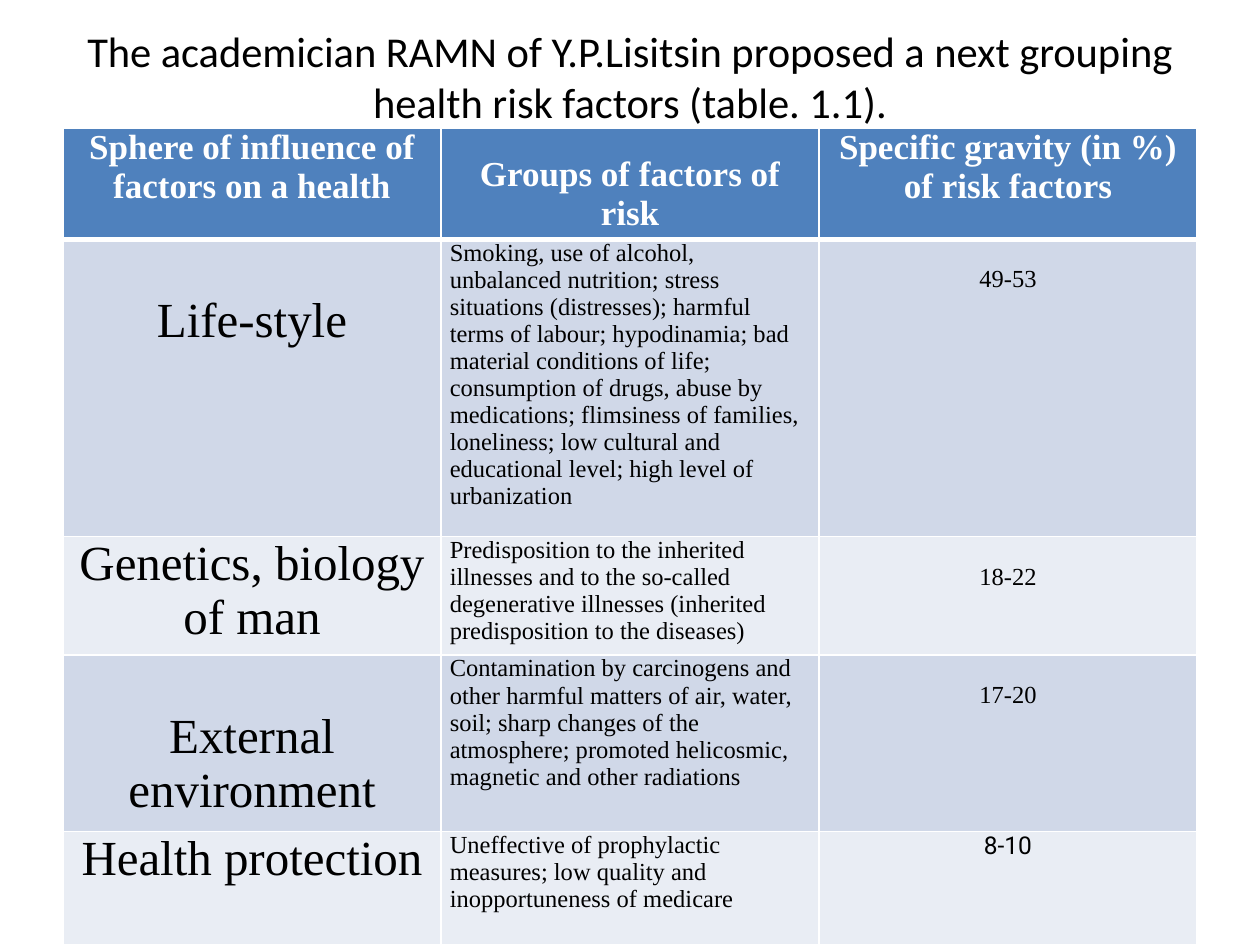
from lxml.etree import SubElement
from pptx import Presentation
from pptx.dml.color import RGBColor
from pptx.enum.text import MSO_ANCHOR as Anchor, PP_ALIGN as Align
from pptx.oxml.ns import qn
from pptx.util import Inches, Pt

TITLE = "The academician RAMN of Y.P.Lisitsin proposed a next grouping health risk factors (table. 1.1)."
HEADINGS = [
    "Sphere of influence of factors on a health",
    "Groups of factors of risk",
    "Specific gravity (in %) of risk factors",
]
FACTORS = [
    ("Life-style",
     "Smoking, use of alcohol, unbalanced nutrition; stress situations (distresses); harmful terms of labour; "
     "hypodinamia; bad material conditions of life; consumption of drugs, abuse by medications; flimsiness of "
     "families, loneliness; low cultural and educational level; high level of urbanization",
     "49-53"),
    ("Genetics, biology of man",
     "Predisposition to the inherited illnesses and to the so-called degenerative illnesses "
     "(inherited predisposition to the diseases)",
     "18-22"),
    ("External environment",
     "Contamination by carcinogens and other harmful matters of air, water, soil; sharp changes of the "
     "atmosphere; promoted helicosmic, magnetic and other radiations",
     "17-20"),
    ("Health protection",
     "Uneffective of prophylactic measures; low quality and inopportuneness of medicare",
     "8-10"),
]
ROW_HEIGHTS = [0.88, 2.36, 0.94, 1.4, 0.9]
COLUMN_WIDTH = 3
TOP_MARGINS = {(0, 1): 0.21, (1, 0): 0.43, (1, 2): 0.21, (2, 2): 0.21, (3, 0): 0.43, (3, 2): 0.21}

THEME = {
    "title": {"name": "Calibri", "size": Pt(24.3), "bold": False, "color": "000000"},
    "heading": {"name": "Times New Roman", "size": Pt(20), "bold": True, "color": "FFFFFF"},
    "sphere": {"name": "Times New Roman", "size": Pt(28), "bold": False, "color": "000000"},
    "body": {"name": "Times New Roman", "size": Pt(14), "bold": False, "color": "000000"},
    "last_value": {"name": "Roboto", "size": Pt(14), "bold": False, "color": "000000"},
    "header_fill": "4F81BD",
    "band_fills": ["E9EDF4", "D0D8E8"],
    "border": "FFFFFF",
}


def write(frame, text, style, alignment):
    paragraph = frame.paragraphs[0]
    paragraph.alignment = alignment
    run = paragraph.add_run()
    run.text = text
    for key, value in THEME[style].items():
        if key == "color":
            run.font.color.rgb = RGBColor.from_string(value)
        else:
            setattr(run.font, key, value)


def add_borders(cell, top, bottom):
    properties = cell._tc.get_or_add_tcPr()
    widths = {"a:lnL": 1, "a:lnR": 1, "a:lnT": top, "a:lnB": bottom}
    for position, (tag, width) in enumerate(widths.items()):
        line = SubElement(properties, qn(tag), w=str(Pt(width)))
        fill = SubElement(line, qn("a:solidFill"))
        SubElement(fill, qn("a:srgbClr"), val=THEME["border"])
        properties.insert(position, line)


def add_title(slide):
    frame = slide.shapes.add_textbox(Inches(0.5), Inches(0.2), Inches(9), Inches(0.82)).text_frame
    settings = {"word_wrap": True, "margin_top": 0, "margin_bottom": 0, "vertical_anchor": Anchor.TOP}
    for key, value in settings.items():
        setattr(frame, key, value)
    write(frame, TITLE, "title", Align.CENTER)


def cell_style(row, column):
    if row == 0:
        return "heading"
    if column == 0:
        return "sphere"
    return "last_value" if (row, column) == (len(FACTORS), 2) else "body"


def add_factor_table(slide):
    rows = [HEADINGS, *FACTORS]
    columns = len(HEADINGS)
    table = slide.shapes.add_table(
        len(rows), columns, Inches(0.5), Inches(1.02),
        Inches(COLUMN_WIDTH * columns), Inches(sum(ROW_HEIGHTS))).table
    for column in table.columns:
        column.width = Inches(COLUMN_WIDTH)
    for row, texts in enumerate(rows):
        table.rows[row].height = Inches(ROW_HEIGHTS[row])
        color = THEME["band_fills"][row % 2] if row else THEME["header_fill"]
        for column, text in enumerate(texts):
            cell = table.cell(row, column)
            settings = {
                "margin_left": Inches(0.07), "margin_right": Inches(0.07),
                "margin_top": Inches(TOP_MARGINS.get((row, column), 0)), "margin_bottom": 0,
                "vertical_anchor": Anchor.TOP,
            }
            for key, value in settings.items():
                setattr(cell, key, value)
            cell.fill.solid()
            cell.fill.fore_color.rgb = RGBColor.from_string(color)
            add_borders(cell, 3 if row == 1 else 1, 3 if row == 0 else 1)
            alignment = Align.LEFT if row and column == 1 else Align.CENTER
            write(cell.text_frame, text, cell_style(row, column), alignment)


def main():
    presentation = Presentation()
    presentation.slide_width = Inches(10)
    presentation.slide_height = Inches(7.5)
    slide = presentation.slides.add_slide(presentation.slide_layouts[6])
    add_title(slide)
    add_factor_table(slide)
    presentation.save("out.pptx")


if __name__ == "__main__":
    main()
